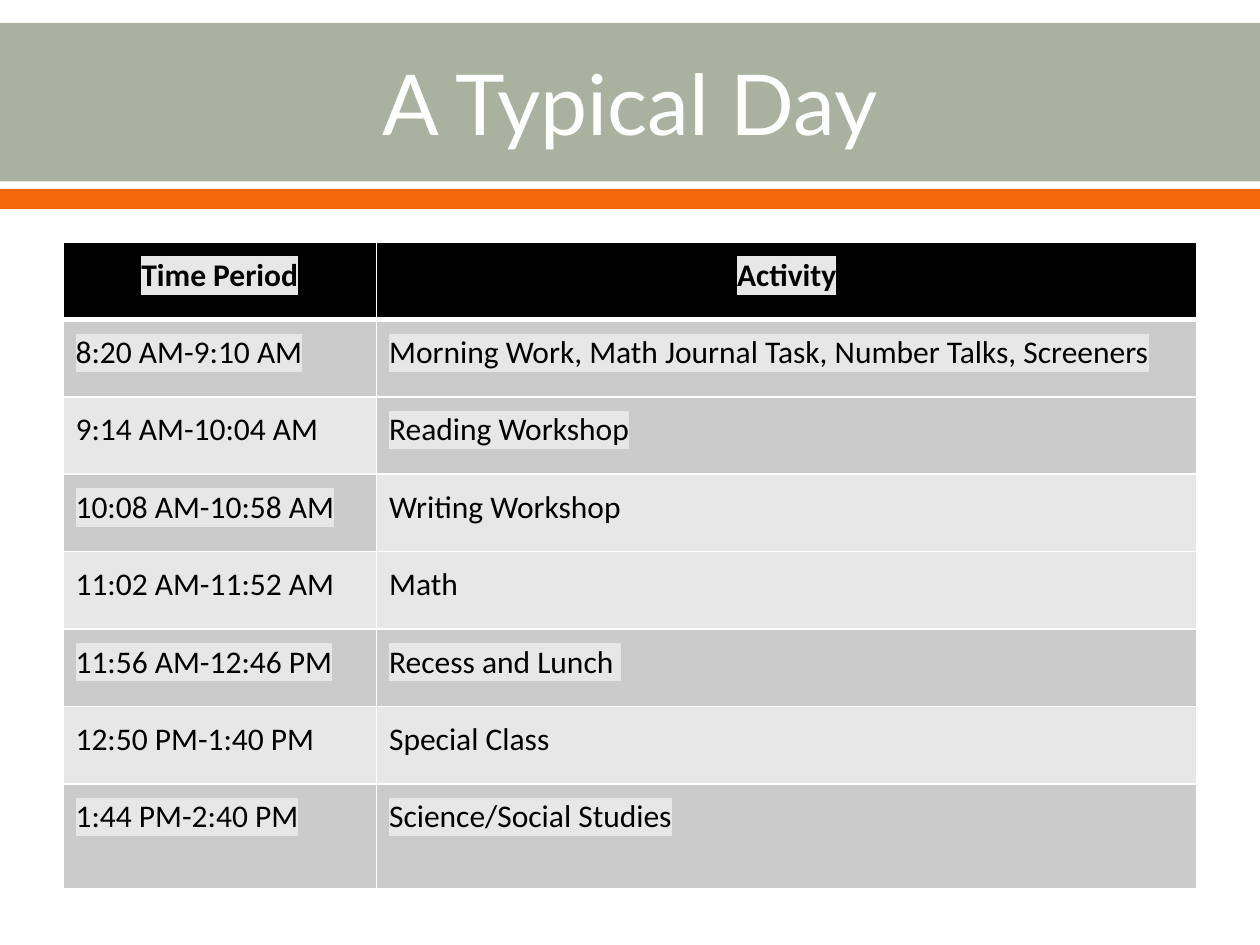
from lxml.etree import SubElement
from pptx import Presentation
from pptx.dml.color import RGBColor
from pptx.enum.shapes import MSO_SHAPE
from pptx.enum.text import MSO_ANCHOR, PP_ALIGN
from pptx.oxml.ns import qn
from pptx.util import Cm, Pt

SAGE = RGBColor(0xAB, 0xB1, 0x9F)
ORANGE = RGBColor(0xF4, 0x68, 0x0B)
WHITE = RGBColor(0xFF, 0xFF, 0xFF)
BLACK = RGBColor(0x00, 0x00, 0x00)
DARK_GRAY = RGBColor(0xCB, 0xCB, 0xCB)
LIGHT_GRAY = RGBColor(0xE7, 0xE7, 0xE7)

SLIDE_WIDTH = Cm(25.4)
COLUMN_WIDTHS = (Cm(6.32), Cm(16.54))
ROW_HEIGHT = Cm(1.56)
LAST_ROW_HEIGHT = Cm(2.11)

# Each row: its texts, then the fill of each cell
SCHEDULE = [
    (("Time Period", "Activity"), (BLACK, BLACK)),
    (("8:20 AM-9:10 AM", "Morning Work, Math Journal Task, Number Talks, Screeners"),
     (DARK_GRAY, DARK_GRAY)),
    (("9:14 AM-10:04 AM", "Reading Workshop"), (LIGHT_GRAY, DARK_GRAY)),
    (("10:08 AM-10:58 AM", "Writing Workshop"), (DARK_GRAY, LIGHT_GRAY)),
    (("11:02 AM-11:52 AM", "Math"), (LIGHT_GRAY, LIGHT_GRAY)),
    (("11:56 AM-12:46 PM", "Recess and Lunch "), (DARK_GRAY, DARK_GRAY)),
    (("12:50 PM-1:40 PM", "Special Class"), (LIGHT_GRAY, LIGHT_GRAY)),
    (("1:44 PM-2:40 PM", "Science/Social Studies"), (DARK_GRAY, DARK_GRAY)),
]


def add_band(slide, top, height, color):
    band = slide.shapes.add_shape(MSO_SHAPE.RECTANGLE, 0, top, SLIDE_WIDTH, height)
    band.shadow.inherit = False
    band.fill.solid()
    band.fill.fore_color.rgb = color
    band.line.fill.background()


def format_title(slide, text):
    title = slide.shapes.title
    title.left, title.top, title.width, title.height = Cm(1.27), Cm(0.5), Cm(22.86), Cm(3.1)
    slide.shapes._spTree.append(title._element)  # bring in front of the bands
    frame = title.text_frame
    frame.text = text
    frame.vertical_anchor = MSO_ANCHOR.MIDDLE
    frame.margin_left = frame.margin_right = Cm(0.25)
    frame.margin_top = frame.margin_bottom = Cm(0.25)
    paragraph = frame.paragraphs[0]
    paragraph.alignment = PP_ALIGN.CENTER
    paragraph.font.name = "Lato"
    paragraph.font.size = Pt(48)
    paragraph.font.color.rgb = WHITE


def add_color(parent, tag, color):
    SubElement(SubElement(parent, qn(tag)), qn("a:srgbClr"), val=str(color))


def set_borders(cell, top_width, bottom_width):
    properties = cell._tc.get_or_add_tcPr()
    widths = {"a:lnL": Pt(1), "a:lnR": Pt(1), "a:lnT": top_width, "a:lnB": bottom_width}
    for tag, width in widths.items():
        line = SubElement(properties, qn(tag), w=str(width))
        add_color(line, "a:solidFill", WHITE)


def fill_cell(cell, text, color, is_header):
    cell.fill.solid()
    cell.fill.fore_color.rgb = color
    paragraph = cell.text_frame.paragraphs[0]
    paragraph.line_spacing = 1.2
    paragraph.alignment = PP_ALIGN.CENTER if is_header else PP_ALIGN.LEFT
    paragraph.font.name = "Calibri"
    paragraph.font.size = Pt(18)
    paragraph.font.bold = is_header
    paragraph.font.color.rgb = BLACK
    run = paragraph.add_run()
    run.text = text
    # The table style sets its own header font, so these go on the run
    run.font.bold = is_header
    run.font.color.rgb = BLACK
    add_color(run._r.get_or_add_rPr(), "a:highlight", LIGHT_GRAY)


def add_schedule(slide):
    height = ROW_HEIGHT * (len(SCHEDULE) - 1) + LAST_ROW_HEIGHT
    table = slide.shapes.add_table(len(SCHEDULE), len(COLUMN_WIDTHS), Cm(1.27), Cm(4.88),
                                   sum(COLUMN_WIDTHS), height).table
    for column, width in zip(table.columns, COLUMN_WIDTHS):
        column.width = width
    for row_index, (texts, colors) in enumerate(SCHEDULE):
        row = table.rows[row_index]
        row.height = ROW_HEIGHT
        for cell, text, color in zip(row.cells, texts, colors):
            set_borders(cell, Pt(3 if row_index == 1 else 1), Pt(3 if row_index == 0 else 1))
            fill_cell(cell, text, color, is_header=row_index == 0)
    row.height = LAST_ROW_HEIGHT


def main():
    presentation = Presentation()
    presentation.slide_width, presentation.slide_height = SLIDE_WIDTH, Cm(19.05)
    slide = presentation.slides.add_slide(presentation.slide_layouts[5])
    add_band(slide, Cm(0.46), Cm(3.2), SAGE)
    add_band(slide, Cm(3.81), Cm(0.41), ORANGE)
    format_title(slide, "A Typical Day")
    add_schedule(slide)
    presentation.save("out.pptx")


if __name__ == "__main__":
    main()
